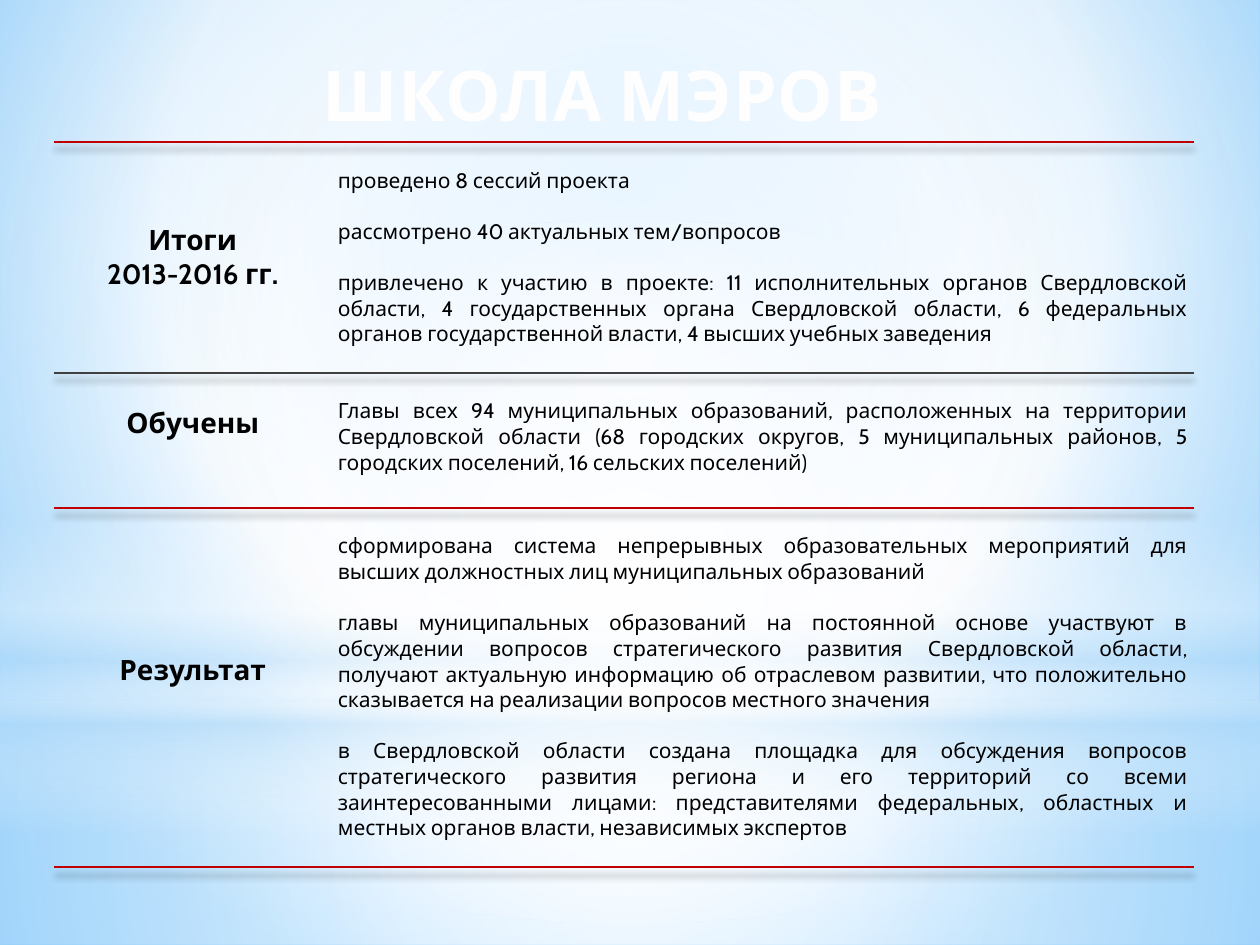
import pptx
import pptx.util
import pptx.oxml
from pptx.dml.color import RGBColor
from pptx.enum.shapes import MSO_SHAPE
from pptx.enum.text import MSO_ANCHOR, PP_ALIGN
from pptx.oxml.ns import nsdecls, qn

Cm = pptx.util.Cm
Pt = pptx.util.Pt

COLORS = {
    "text": "000000", "title": "FFFEFE", "outline": "E73214",
    "rule": "C00000", "thin rule": "404040", "white": "FFFFFF",
    "haze": "B4DCFA", "sky": "9ED5FF", "deep sky": "5BB9FF",
}
FONT = "Cabin"
LINE = 14.6  # height of one body line, in points
CENTRE = (50, 50, 50, 50)

ROWS = [
    dict(height=4.65, rule=("thin rule", 0.75), lift=0,
         label=["Итоги", "2013-2016 гг."],
         body=["проведено 8 сессий проекта",
               "рассмотрено 40 актуальных тем/вопросов",
               "привлечено к участию в проекте: 11 исполнительных органов "
               "Свердловской области, 4 государственных органа Свердловской "
               "области, 6 федеральных органов государственной власти, "
               "4 высших учебных заведения"]),
    dict(height=2.72, rule=("rule", 1.25), lift=20,
         label=["Обучены"],
         body=["Главы всех 94 муниципальных образований, расположенных на "
               "территории Свердловской области (68 городских округов, "
               "5 муниципальных районов, 5 городских поселений, "
               "16 сельских поселений)"]),
    dict(height=7.24, rule=("rule", 1.25), lift=20,
         label=["Результат"],
         body=["сформирована система непрерывных образовательных мероприятий "
               "для высших должностных лиц муниципальных образований",
               "главы муниципальных образований на постоянной основе участвуют "
               "в обсуждении вопросов стратегического развития Свердловской "
               "области, получают актуальную информацию об отраслевом развитии, "
               "что положительно сказывается на реализации вопросов местного "
               "значения",
               "в Свердловской области создана площадка для обсуждения вопросов "
               "стратегического развития региона и его территорий со всеми "
               "заинтересованными лицами: представителями федеральных, "
               "областных и местных органов власти, независимых экспертов"]),
]


def write(para, text, size=12, bold=False, color="text",
          align=PP_ALIGN.CENTER, before=0):
    para.alignment = align
    para.space_before = Pt(before)
    span = para.add_run()
    span.text = text
    span.font.name = FONT
    span.font.size = Pt(size)
    span.font.bold = bold
    span.font.color.rgb = RGBColor.from_string(COLORS[color])
    return span


def solid(color):
    return f'<a:solidFill><a:srgbClr val="{COLORS[color]}"/></a:solidFill>'


def put_gradient(parent, stops, focus=None):
    """Swap the empty fill of parent for a gradient: radial, or top to bottom."""
    marks = "".join(
        f'<a:gs pos="{pos * 1000}"><a:srgbClr val="{COLORS[color]}">'
        f'<a:alpha val="{opacity * 1000}"/></a:srgbClr></a:gs>'
        for pos, color, opacity in stops)
    if focus:
        sides = " ".join(f'{side}="{share * 1000}"' for side, share in zip("ltrb", focus))
        way = f'<a:path path="circle"><a:fillToRect {sides}/></a:path>'
    else:
        way = '<a:lin ang="5400000" scaled="0"/>'
    gradient = pptx.oxml.parse_xml(
        f'<a:gradFill {nsdecls("a")} rotWithShape="1"><a:gsLst>{marks}</a:gsLst>{way}</a:gradFill>')
    parent.replace(parent.find(qn("a:noFill")), gradient)


class Slide:
    def __init__(self, deck):
        self.page = deck.slides.add_slide(deck.slide_layouts[5])

    def background(self, stops, focus):
        self.page.background.fill.background()
        put_gradient(self.page.element.find(".//" + qn("p:bgPr")), stops, focus)

    def glow(self, kind, top, height, stops, focus=None):
        shape = self.page.shapes.add_shape(kind, 0, Cm(top), Cm(25.4), Cm(height))
        shape.shadow.inherit = False
        shape.line.fill.background()
        shape.fill.background()
        put_gradient(shape.element.spPr, stops, focus)

    def title(self, text, left, top, width, height):
        box = self.page.shapes.title
        box.left, box.top, box.width, box.height = map(Cm, (left, top, width, height))
        box.element.getparent().append(box.element)  # bring to front
        frame = box.text_frame
        frame.word_wrap = True
        frame.vertical_anchor = MSO_ANCHOR.TOP
        span = write(frame.paragraphs[0], text, size=40, bold=True, color="title")
        props = span.font._element
        props.set("spc", "50")
        props.insert(0, pptx.oxml.parse_xml(
            f'<a:ln {nsdecls("a")} w="12700">{solid("outline")}</a:ln>'))

    def table(self, rows, left, top, widths):
        frame = self.page.shapes.add_table(
            len(rows), len(widths), Cm(left), Cm(top), Cm(sum(widths)),
            Cm(sum(row["height"] for row in rows)))
        grid = frame.table
        grid.first_row = grid.horz_banding = False
        props = grid._tbl.tblPr
        props.find(qn("a:tableStyleId")).text = "{2D5ABB26-0587-4C30-8999-92F81FD0307C}"
        props.insert(0, pptx.oxml.parse_xml(
            f'<a:effectLst {nsdecls("a")}><a:outerShdw blurRad="50800" dist="50800" '
            'dir="5400000"><a:srgbClr val="000000"><a:alpha val="40000"/></a:srgbClr>'
            '</a:outerShdw></a:effectLst>'))
        for column, width in zip(grid.columns, widths):
            column.width = Cm(width)
        above = ("rule", 1.25)
        for index, row in enumerate(rows):
            grid.rows[index].height = Cm(row["height"])
            label, body = grid.cell(index, 0), grid.cell(index, 1)
            self.cell(label, row["label"], above, row["rule"], bottom=row["lift"],
                      anchor=MSO_ANCHOR.MIDDLE, size=16, bold=True)
            self.cell(body, row["body"], above, row["rule"], top=LINE, gap=LINE,
                      align=PP_ALIGN.JUSTIFY)
            above = row["rule"]

    def cell(self, cell, texts, above, below, top=0, bottom=0, gap=0,
             anchor=MSO_ANCHOR.TOP, **style):
        cell.fill.background()
        cell.vertical_anchor = anchor
        cell.margin_left = cell.margin_right = Cm(0.13)
        cell.margin_top, cell.margin_bottom = Pt(top), Pt(bottom)
        for index, text in enumerate(texts):
            frame = cell.text_frame
            para = frame.add_paragraph() if index else frame.paragraphs[0]
            write(para, text, before=gap if index else 0, **style)
        for place, (side, (color, width)) in enumerate((("T", above), ("B", below))):
            cell._tc.tcPr.insert(place, pptx.oxml.parse_xml(
                f'<a:ln{side} {nsdecls("a")} w="{Pt(width)}">{solid(color)}</a:ln{side}>'))


def main():
    deck = pptx.Presentation()
    deck.slide_width, deck.slide_height = Cm(25.4), Cm(19.05)
    slide = Slide(deck)

    # Sky backdrop
    slide.background([(0, "sky", 100), (60, "white", 100), (100, "deep sky", 100)],
                     (20, 10, 20, 60))
    slide.glow(MSO_SHAPE.RECTANGLE, 14.17, 4.88,
               [(0, "white", 91), (37, "white", 76), (100, "haze", 79)], CENTRE)
    slide.glow(MSO_SHAPE.RECTANGLE, 0, 14.17,
               [(0, "white", 89), (48, "white", 62), (100, "haze", 79)], CENTRE)
    slide.glow(MSO_SHAPE.RECTANGLE, 10.46, 6.35,
               [(0, "white", 0), (29, "white", 30), (45, "haze", 40),
                (55, "white", 26), (65, "haze", 60), (100, "white", 0)])
    slide.glow(MSO_SHAPE.OVAL, 4.45, 14.17,
               [(0, "white", 100), (56, "white", 0)], CENTRE)

    # Results table and heading
    slide.table(ROWS, 1.09, 2.87, [5.59, 17.4])
    slide.title("ШКОЛА МЭРОВ", 4.7, 0.91, 14.88, 1.96)
    deck.save("out.pptx")


if __name__ == "__main__":
    main()
